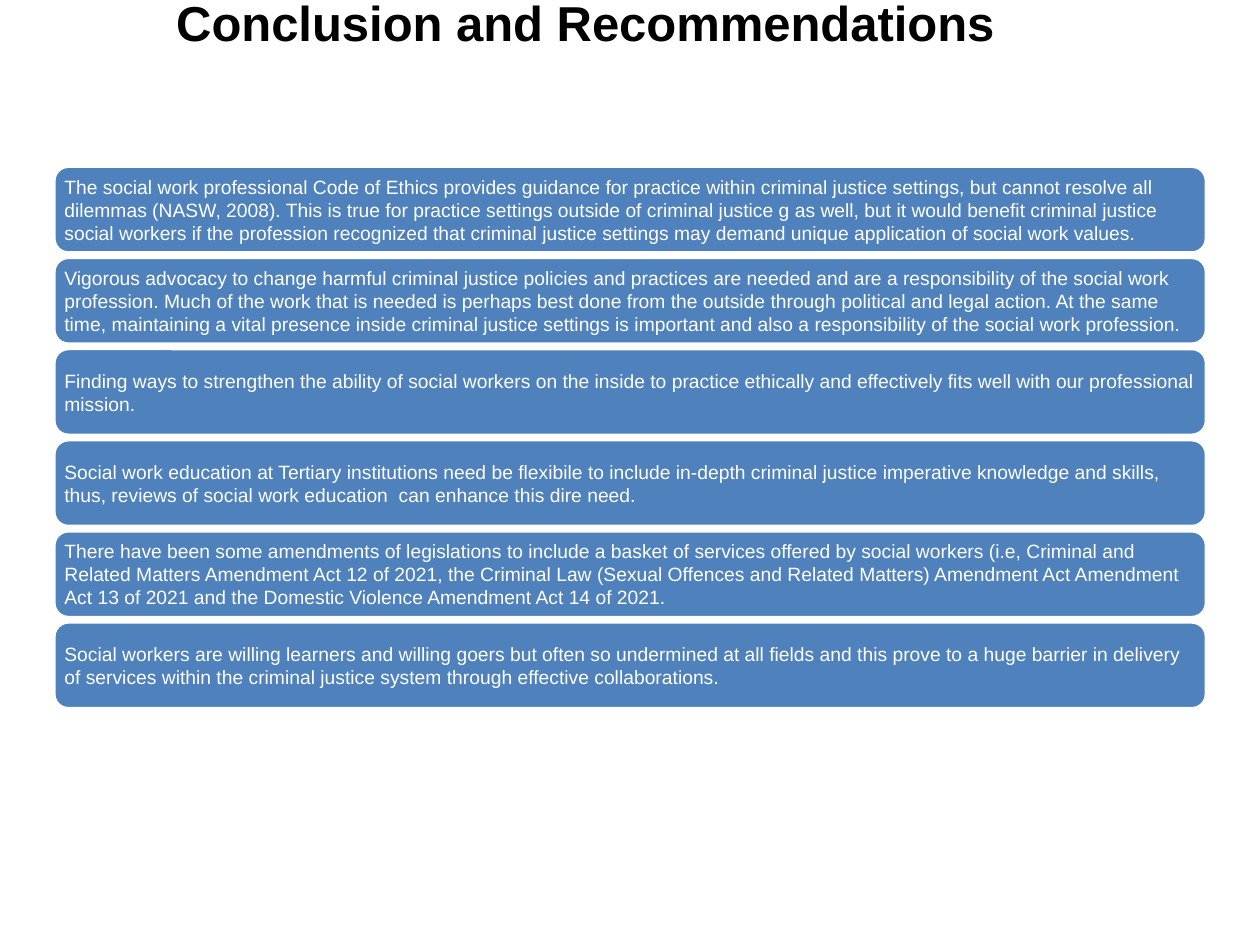
from pptx import Presentation
from pptx.dml.color import RGBColor
from pptx.enum import shapes, text
from pptx.util import Pt

BLACK = RGBColor(0x00, 0x00, 0x00)
WHITE = RGBColor(0xFF, 0xFF, 0xFF)
BLUE = RGBColor(0x4F, 0x81, 0xBD)
FONT = "Arial"

TITLE = "Conclusion and Recommendations "
CONCLUSIONS = [
    "The social work professional Code of Ethics provides guidance for practice within criminal "
    "justice settings, but cannot resolve all dilemmas (NASW, 2008). This is true for practice "
    "settings outside of criminal justice g as well, but it would benefit criminal justice social "
    "workers if the profession recognized that criminal justice settings may demand unique "
    "application of social work values.",
    "Vigorous advocacy to change harmful criminal justice policies and practices are needed and "
    "are a responsibility of the social work profession. Much of the work that is needed is "
    "perhaps best done from the outside through political and legal action. At the same time, "
    "maintaining a vital presence inside criminal justice settings is important and also a "
    "responsibility of the social work profession.",
    "Finding ways to strengthen the ability of social workers on the inside to practice ethically "
    "and effectively fits well with our professional mission.",
    "Social work education at Tertiary institutions need be flexibile to include in-depth criminal "
    "justice imperative knowledge and skills, thus, reviews of social work education  can enhance "
    "this dire need.",
    "There have been some amendments of legislations to include a basket of services offered by "
    "social workers (i.e, Criminal and Related Matters Amendment Act 12 of 2021, the Criminal Law "
    "(Sexual Offences and Related Matters) Amendment Act Amendment Act 13 of 2021 and the Domestic "
    "Violence Amendment Act 14 of 2021.",
    "Social workers are willing learners and willing goers but often so undermined at all fields "
    "and this prove to a huge barrier in delivery of services within the criminal justice system "
    "through effective collaborations.",
]


def write_text(box, words, *, size, color, bold=False, align=text.PP_ALIGN.LEFT, inset=3.6):
    """Fill a box with one vertically centred paragraph."""
    frame = box.text_frame
    frame.word_wrap = True
    frame.vertical_anchor = text.MSO_ANCHOR.MIDDLE
    frame.margin_left = frame.margin_right = Pt(inset)
    frame.margin_top = frame.margin_bottom = Pt(inset)
    para = frame.paragraphs[0]
    para.alignment = align
    span = para.add_run()
    span.text = words
    span.font.name = FONT
    span.font.size = Pt(size)
    span.font.bold = bold
    span.font.color.rgb = color


def add_title(page, left, top, width, height):
    """Place the centred slide title."""
    box = page.shapes.add_textbox(Pt(left), Pt(top), Pt(width), Pt(height))
    write_text(box, TITLE, size=28, color=BLACK, bold=True, align=text.PP_ALIGN.CENTER)


def add_conclusions(page, left, top, width, height, gap=2.5):
    """Stack one rounded card for each conclusion, evenly spaced."""
    count = len(CONCLUSIONS)
    card_height = (height - gap * (count - 1)) / count
    for index, words in enumerate(CONCLUSIONS):
        card_top = top + index * (card_height + gap)
        card = page.shapes.add_shape(
            shapes.MSO_SHAPE.ROUNDED_RECTANGLE,
            Pt(left), Pt(card_top), Pt(width), Pt(card_height),
        )
        card.shadow.inherit = False
        card.fill.solid()
        card.fill.fore_color.rgb = BLUE
        card.line.color.rgb = WHITE
        card.line.width = Pt(2)
        write_text(card, words, size=11, color=WHITE)


def main():
    """Build and save the deck."""
    deck = Presentation()
    deck.slide_width, deck.slide_height = Pt(720), Pt(540)
    page = deck.slides.add_slide(deck.slide_layouts[6])
    add_title(page, 14.4, -1.4, 648, 28)
    add_conclusions(page, 30.8, 95, 658.6, 310)
    deck.save("out.pptx")


if __name__ == "__main__":
    main()
